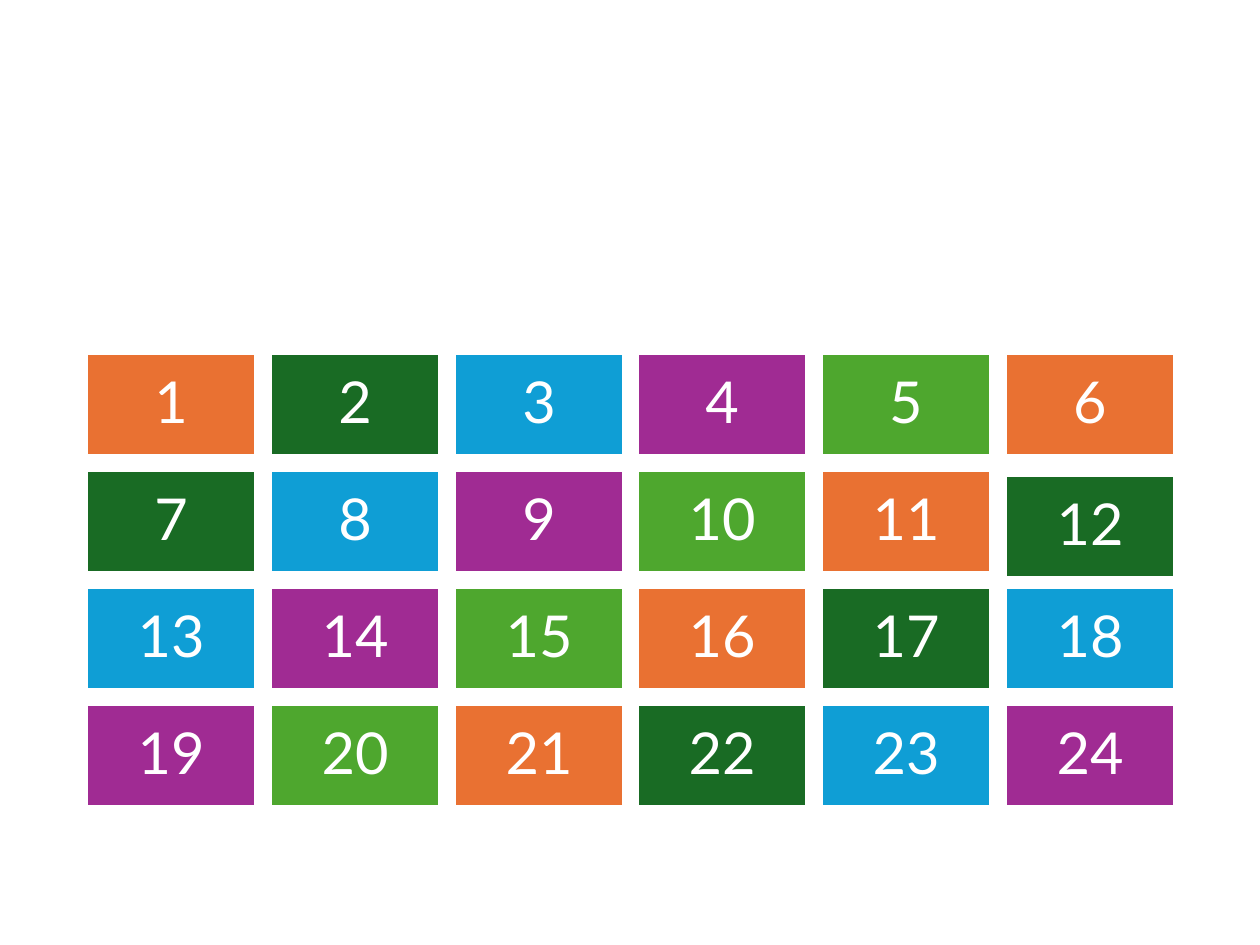
import pptx
import pptx.dml.color
import pptx.enum.shapes
import pptx.enum.text
import pptx.util

PX = 914400 // 126
COLS, ROWS = 6, 4
LEFT, LAST, TOP = 87, 1006, 354
WIDE, HIGH, STEP = 168, 101, 117
INSET = 18
FILLS = ["E97132", "196B24", "0F9ED5", "A02B93", "4EA72E"]
WHITE = "FFFFFF"
DROPS = {12: 5}


def px(size):
    return pptx.util.Emu(size * PX)


def paint(target, color):
    target.rgb = pptx.dml.color.RGBColor.from_string(color)


def add_label(tile, text):
    frame = tile.text_frame
    frame.word_wrap = True
    frame.vertical_anchor = pptx.enum.text.MSO_ANCHOR.MIDDLE
    frame.margin_left = frame.margin_right = px(INSET)
    frame.margin_top = frame.margin_bottom = px(INSET)
    para = frame.paragraphs[0]
    para.alignment = pptx.enum.text.PP_ALIGN.CENTER
    para.line_spacing = 0.9
    para.space_after = pptx.util.Pt(12)
    run = para.add_run()
    run.text = text
    run.font.name = "Lato"
    run.font.size = pptx.util.Pt(33)
    paint(run.font.color, WHITE)


def add_tile(slide, left, top, fill, text):
    tile = slide.shapes.add_shape(
        pptx.enum.shapes.MSO_SHAPE.RECTANGLE,
        px(left), px(top), px(WIDE), px(HIGH))
    tile.shadow.inherit = False
    tile.fill.solid()
    paint(tile.fill.fore_color, fill)
    paint(tile.line.color, WHITE)
    tile.line.width = pptx.util.Pt(1.5)
    add_label(tile, text)


def main():
    """Build a slide with a grid of numbered tiles in cycling colours."""
    deck = pptx.Presentation()
    deck.slide_width = pptx.util.Inches(10)
    deck.slide_height = pptx.util.Inches(7.5)
    slide = deck.slides.add_slide(deck.slide_layouts[6])
    for index in range(COLS * ROWS):
        row, col = divmod(index, COLS)
        number = index + 1
        left = LEFT + round((LAST - LEFT) * col / (COLS - 1))
        top = TOP + row * STEP + DROPS.get(number, 0)
        add_tile(slide, left, top, FILLS[index % len(FILLS)], str(number))
    deck.save("out.pptx")


if __name__ == "__main__":
    main()
